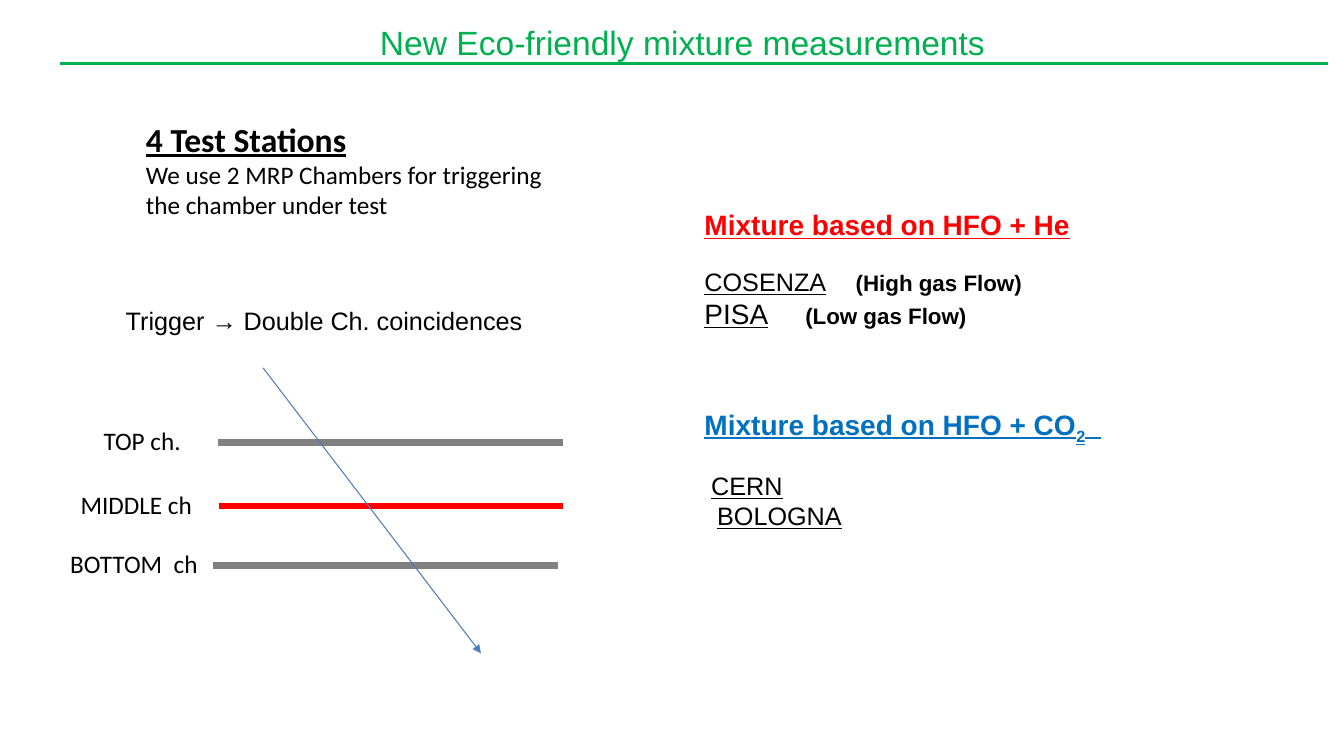
"""Build the slide on the test stations and gas mixtures."""
import dataclasses

import lxml.etree
import pptx
import pptx.dml.color
import pptx.enum.shapes
import pptx.enum.text
import pptx.oxml.ns
import pptx.util

Cm = pptx.util.Cm
Pt = pptx.util.Pt
qn = pptx.oxml.ns.qn


@dataclasses.dataclass(frozen=True)
class Theme:
    sans: str = "Arial"
    plain: str = "Calibri"
    black: str = "000000"
    green: str = "00B050"
    red: str = "FF0000"
    blue: str = "0070C0"
    gray: str = "808080"
    track: str = "4B7EBC"
    large: int = 24
    head: int = 20
    text: int = 18
    note: int = 16


class Page:
    def __init__(self, deck, theme):
        self.theme = theme
        self.slide = deck.slides.add_slide(deck.slide_layouts[3])

    def style(self, font, size, color=None, name=None, bold=False, line=False):
        font.size = Pt(size)
        font.name = name or self.theme.sans
        font.bold = bold
        font.underline = line
        font.color.rgb = pptx.dml.color.RGBColor.from_string(color or self.theme.black)

    def place(self, shape, left, top, width, height):
        shape.left, shape.top = Cm(left), Cm(top)
        shape.width, shape.height = Cm(width), Cm(height)

    def frame(self, shape, wrap=True, anchor="TOP"):
        frame = shape.text_frame
        frame.auto_size = pptx.enum.text.MSO_AUTO_SIZE.NONE
        frame.word_wrap = wrap
        frame.vertical_anchor = pptx.enum.text.MSO_ANCHOR[anchor]
        return frame

    def title(self, text, *box):
        shape = self.slide.shapes.title
        self.place(shape, *box)
        para = self.frame(shape, anchor="MIDDLE").paragraphs[0]
        para.text = text
        para.alignment = pptx.enum.text.PP_ALIGN.LEFT
        self.style(para.font, self.theme.large, self.theme.green)

    def text(self, rows, *box, wrap=True):
        shape = self.slide.shapes.add_textbox(*map(Cm, box))
        frame = self.frame(shape, wrap)
        for i, (text, look) in enumerate(rows):
            para = frame.add_paragraph() if i else frame.paragraphs[0]
            para.text = text
            self.style(para.font, **look)

    def item(self, frame, first=False, indent=0.0, gap=0, tab=None):
        para = frame.paragraphs[0] if first else frame.add_paragraph()
        props = para._p.get_or_add_pPr()
        props.set("marL", str(Cm(indent)))
        props.set("indent", "0")
        lxml.etree.SubElement(props, qn("a:buNone"))
        if tab:
            stops = lxml.etree.SubElement(props, qn("a:tabLst"))
            lxml.etree.SubElement(stops, qn("a:tab"), pos=str(Cm(tab)), algn="r")
        para.space_before = Pt(gap)
        return para

    def mix(self, index, head, color, sites, *box):
        shape = self.slide.placeholders[index]
        self.place(shape, *box)
        frame = self.frame(shape)
        para = self.item(frame, first=True)
        for text, base in head:
            run = para.add_run()
            run.text = text
            if base:
                run._r.get_or_add_rPr().set("baseline", str(base))
        self.style(para.font, self.theme.head, color, bold=True, line=True)
        for i, (name, size, note, indent) in enumerate(sites):
            para = self.item(frame, indent=indent, gap=0 if i else 18,
                             tab=8.8 if note else None)
            run = para.add_run()
            run.text = name
            if note:
                self.style(run.font, size, line=True)
                run = para.add_run()
                run.text = "\t" + note
                self.style(run.font, self.theme.note, bold=True)
            else:
                self.style(para.font, size, line=True)

    def line(self, start, end, color, width, arrow=False):
        kind = pptx.enum.shapes.MSO_CONNECTOR.STRAIGHT
        line = self.slide.shapes.add_connector(kind, *map(Cm, start + end))
        line.line.color.rgb = pptx.dml.color.RGBColor.from_string(color)
        line.line.width = Pt(width)
        if arrow:
            lxml.etree.SubElement(line.line._get_or_add_ln(), qn("a:tailEnd"), type="triangle")
        lxml.etree.SubElement(line._element.spPr, qn("a:effectLst"))


def main():
    theme = Theme()
    deck = pptx.Presentation()
    deck.slide_width, deck.slide_height = Cm(33.87), Cm(19.05)
    page = Page(deck, theme)

    page.title("New Eco-friendly mixture measurements", 9.32, 0.36, 16.76, 1.4)
    page.line((1.52, 1.6), (33.48, 1.6), theme.green, 2.5)

    page.mix(1, [("Mixture based on HFO + He", 0)], theme.red,
             [("COSENZA", theme.text, "(High gas Flow)", 0),
              ("PISA", theme.head, "(Low gas Flow)", 0)],
             17.5, 5.1, 14.17, 4)
    page.mix(2, [("Mixture based on HFO + CO", 0), ("2", -25000), ("  ", 0)], theme.blue,
             [("CERN", theme.text, "", 0.17), ("BOLOGNA", theme.text, "", 0.32)],
             17.5, 10.13, 13.74, 3.94)

    plain = {"size": theme.text, "name": theme.plain}
    page.text([("4 Test Stations",
                {"size": theme.large, "name": theme.plain, "bold": True, "line": True}),
               ("We use 2 MRP Chambers for triggering the chamber under test", plain)],
              3.43, 2.87, 10.59, 2.82)
    page.text([("Trigger → Double Ch. coincidences", {"size": theme.text})],
              2.92, 7.57, 10.59, 1.02, wrap=False)

    for name, left, bar, level, color in (
            ("TOP ch.", 2.36, 5.49, 11.15, theme.gray),
            ("MIDDLE ch", 1.78, 5.51, 12.75, theme.red),
            ("BOTTOM  ch", 1.52, 5.38, 14.25, theme.gray)):
        page.line((bar, level), (bar + 8.69, level), color, 4.5)
        page.text([(name, plain)], left, level - 0.55, 3.9, 0.95)
    page.line((6.63, 9.27), (12.12, 16.46), theme.track, 0.75, arrow=True)

    deck.save("out.pptx")


if __name__ == "__main__":
    main()
